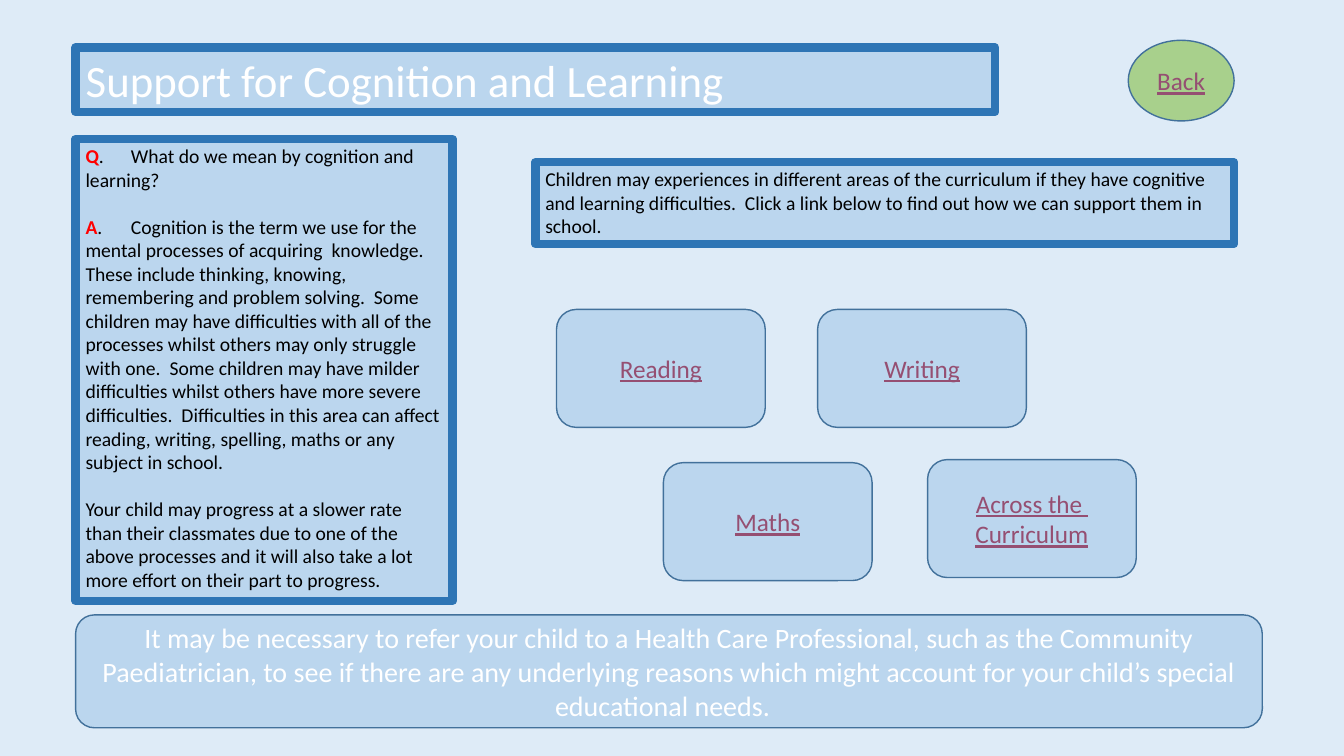
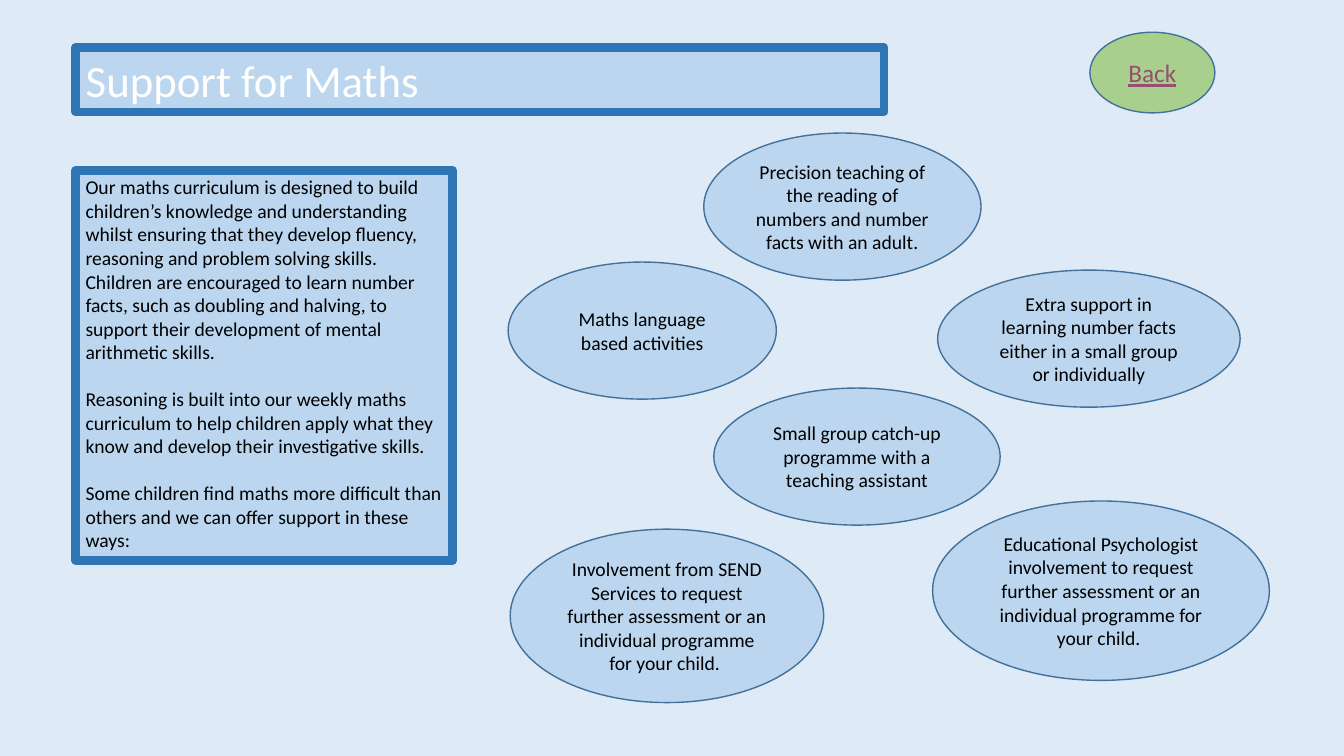
from lxml import etree
from pptx import Presentation
from pptx.dml.color import RGBColor
from pptx.enum.shapes import MSO_SHAPE
from pptx.enum.text import MSO_ANCHOR, MSO_AUTO_SIZE, PP_ALIGN
from pptx.oxml.ns import qn
from pptx.util import Inches, Pt

RECT, ELLIPSE, ROUNDED = MSO_SHAPE.RECTANGLE, MSO_SHAPE.OVAL, MSO_SHAPE.ROUNDED_RECTANGLE
LEFT, CENTER = PP_ALIGN.LEFT, PP_ALIGN.CENTER
TOP, MIDDLE = MSO_ANCHOR.TOP, MSO_ANCHOR.MIDDLE
NO_FIT = MSO_AUTO_SIZE.NONE
TITLE_ONLY = 5

FONT = "Calibri"
PAGE, PANEL, GREEN = "DEEBF7", "BBD6EE", "A8D08C"
FRAME, OUTLINE = "2E75B5", "42719B"
WHITE, BLACK, RED, LINK = "FFFFFF", "000000", "FF0000", "954F72"
MARGIN = 0.75
COLUMN_WIDTH = 3.74
BUTTON_WIDTH, BUTTON_HEIGHT = 2.07, 1.17
BLOCK_GAP = 16.8
LEAD_TAB = 0.45

COGNITION = [
    ("Q", ".\tWhat do we mean by cognition and learning?"),
    ("A", ".\tCognition is the term we use for the mental processes of acquiring  knowledge. "
     "These include thinking, knowing, remembering and problem solving.  Some children may "
     "have difficulties with all of the processes whilst others may only struggle with one.  "
     "Some children may have milder difficulties whilst others have more severe difficulties.  "
     "Difficulties in this area can affect reading, writing, spelling, maths or any subject "
     "in school."),
    ("", "Your child may progress at a slower rate than their classmates due to one of the above "
     "processes and it will also take a lot more effort on their part to progress."),
]
LINK_PROMPT = (
    "Children may experiences in different areas of the curriculum if they have cognitive and "
    "learning difficulties.  Click a link below to find out how we can support them in school.")
REFERRAL = (
    "It may be necessary to refer your child to a Health Care Professional, such as the "
    "Community Paediatrician, to see if there are any underlying reasons which might account "
    "for your child’s special educational needs.  ")
TOPICS = [
    (5.52, 3.07, ["Reading"]),
    (8.11, 3.07, ["Writing"]),
    (6.58, 4.59, ["Maths"]),
    (9.2, 4.56, ["Across the ", "Curriculum"]),
]
MATHS = [
    "Our maths curriculum is designed to build children’s knowledge and understanding whilst "
    "ensuring that they develop fluency, reasoning and problem solving skills.",
    "Children are encouraged to learn number facts, such as doubling and halving, to support "
    "their development of mental arithmetic skills.",
    "Reasoning is built into our weekly maths curriculum to help children apply what they know "
    "and develop their investigative skills.",
    "Some children find maths more difficult than others and we can offer support in these ways:",
]
SUPPORT = [
    ((7.08, 3.85, 2.84, 1.36), "Small group catch-up programme with a teaching assistant"),
    ((5.04, 2.6, 2.66, 1.36), "Maths language based activities"),
    ((9.3, 2.68, 3, 1.36),
     "Extra support in learning number facts either in a small group or individually"),
    ((9.25, 4.97, 3.34, 1.78),
     "Educational Psychologist involvement to request further assessment or an individual "
     "programme for your child. "),
    ((5.06, 5.25, 3.11, 1.72),
     "Involvement from SEND Services to request further assessment or an individual "
     "programme for your child. "),
    ((6.98, 1.32, 2.75, 1.46),
     "Precision teaching of the reading of numbers and number facts with an adult."),
]


def color(hex_code):
    """Turn a hex string into a colour."""
    return RGBColor.from_string(hex_code)


def paint(shape, fill, line, weight):
    """Fill and outline a shape."""
    shape.fill.solid()
    shape.fill.fore_color.rgb = color(fill)
    shape.line.color.rgb = color(line)
    shape.line.width = Pt(weight)


def write(shape, paragraphs, size=14, ink=BLACK, align=LEFT, anchor=TOP,
          underline=False, block_starts=()):
    """Write paragraphs, each a string or a pair of red lead and text."""
    frame = shape.text_frame
    frame.word_wrap = True
    frame.auto_size = NO_FIT
    frame.vertical_anchor = anchor
    frame.margin_left = frame.margin_right = Inches(0.1)
    frame.margin_top = frame.margin_bottom = Inches(0.05)
    for index, content in enumerate(paragraphs):
        paragraph = frame.add_paragraph() if index else frame.paragraphs[0]
        paragraph.alignment = align
        paragraph.space_before = Pt(BLOCK_GAP if index in block_starts else 0)
        lead, body = ("", content) if isinstance(content, str) else content
        if lead:
            tabs = etree.SubElement(paragraph._p.get_or_add_pPr(), qn("a:tabLst"))
            etree.SubElement(tabs, qn("a:tab"), pos=str(Inches(LEAD_TAB)), algn="l")
        for words, run_ink, bold in ((lead, RED, True), (body, ink, False)):
            if words:
                run = paragraph.add_run()
                run.text = words
                run.font.name = FONT
                run.font.size = Pt(size)
                run.font.bold = bold
                run.font.underline = underline
                run.font.color.rgb = color(run_ink)


def add_box(slide, kind, box, paragraphs, fill=PANEL, line=OUTLINE, weight=1, **text_format):
    """Add a painted shape with text."""
    shape = slide.shapes.add_shape(kind, *map(Inches, box))
    shape.shadow.inherit = False
    paint(shape, fill, line, weight)
    write(shape, paragraphs, **text_format)


def add_panel(slide, box, paragraphs, **text_format):
    """Add a heavily framed panel of running text."""
    add_box(slide, RECT, box, paragraphs, line=FRAME, weight=6, **text_format)


def add_link(slide, kind, box, paragraphs, fill=PANEL):
    """Add a button with underlined wording."""
    add_box(slide, kind, box, paragraphs, fill=fill, size=18, ink=LINK,
            align=CENTER, anchor=MIDDLE, underline=True)


def add_support_slide(prs, heading, title_width, back_box):
    """Start a slide with its framed title and back button."""
    slide = prs.slides.add_slide(prs.slide_layouts[TITLE_ONLY])
    title = slide.shapes.title
    title.left, title.top, title.width, title.height = map(
        Inches, (MARGIN, 0.47, title_width, 0.64))
    paint(title, PANEL, FRAME, 6)
    write(title, [heading], size=32, ink=WHITE)
    add_link(slide, ELLIPSE, back_box, ["Back"], fill=GREEN)
    return slide


def build_cognition(prs):
    """Build the overview slide with its topic buttons."""
    slide = add_support_slide(prs, "Support for Cognition and Learning", 9.12,
                              (11.19, 0.4, 1.05, 0.8))
    add_panel(slide, (MARGIN, 1.38, COLUMN_WIDTH, 4.58), COGNITION, block_starts=(1, 2))
    add_panel(slide, (5.31, 1.61, 6.93, 0.81), [LINK_PROMPT])
    add_box(slide, ROUNDED, (MARGIN, 6.1, 11.77, 1.12), [REFERRAL], size=20, ink=WHITE,
            align=CENTER, anchor=MIDDLE)
    for left, top, topic in TOPICS:
        add_link(slide, ROUNDED, (left, top, BUTTON_WIDTH, BUTTON_HEIGHT), topic)


def build_maths(prs):
    """Build the maths slide with its support ellipses."""
    slide = add_support_slide(prs, "Support for Maths", 8.02, (10.81, 0.32, 1.24, 0.8))
    add_panel(slide, (MARGIN, 1.69, COLUMN_WIDTH, 3.87), MATHS, block_starts=(2, 3))
    for box, offer in SUPPORT:
        add_box(slide, ELLIPSE, box, [offer], align=CENTER, anchor=MIDDLE)


def main():
    """Build and save the presentation."""
    prs = Presentation()
    prs.slide_width, prs.slide_height = Inches(13.33), Inches(7.5)
    backdrop = prs.slide_master.background.fill
    backdrop.solid()
    backdrop.fore_color.rgb = color(PAGE)
    build_cognition(prs)
    build_maths(prs)
    prs.save("out.pptx")


if __name__ == "__main__":
    main()
